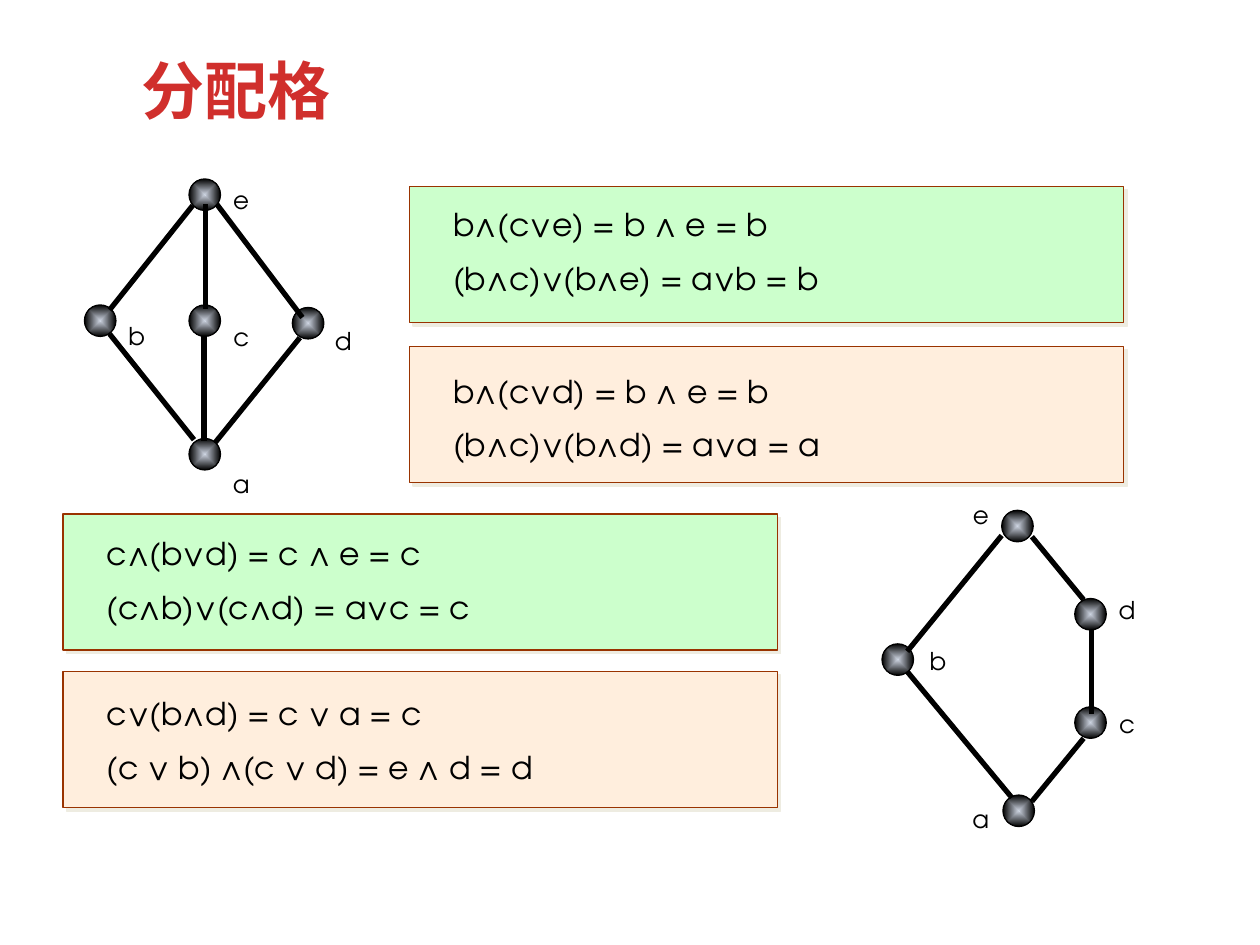
from lxml.etree import SubElement
from pptx import Presentation
from pptx.dml.color import RGBColor
from pptx.enum.shapes import MSO_CONNECTOR, MSO_SHAPE
from pptx.enum.text import MSO_ANCHOR, PP_ALIGN
from pptx.oxml import parse_xml
from pptx.oxml.ns import nsdecls, qn
from pptx.util import Inches, Pt

COLORS = {
    "title": "D02F2C",
    "text": "000000",
    "green": "CCFFCC",
    "peach": "FFEEDD",
    "border": "993300",
    "shadow": "EEECE1",
    "node_center": "CDD4E1",
    "node_edge": "000000",
}
NODE_SIZE = 0.25
LABEL_SIZE = 0.33


def write_text(box, text, size, font="TeX Gyre Adventor", color="text", bold=False,
               align=PP_ALIGN.LEFT, anchor=MSO_ANCHOR.TOP, gap=0):
    frame = box.text_frame
    frame.word_wrap = True
    frame.vertical_anchor = anchor
    for index, line in enumerate(text.split("\n")):
        para = frame.paragraphs[0] if index == 0 else frame.add_paragraph()
        para.alignment = align
        para.space_before = Pt(gap if index else 0)
        span = para.add_run()
        span.text = line
        span.font.size = Pt(size)
        span.font.bold = bold
        span.font.color.rgb = RGBColor.from_string(COLORS[color])
        span.font.name = font


def add_shadow(fill_element):
    fill_element.addnext(parse_xml(
        f'<a:effectLst {nsdecls("a")}><a:outerShdw dist="35560" dir="2700000" algn="ctr" '
        f'rotWithShape="0"><a:srgbClr val="{COLORS["shadow"]}"/></a:outerShdw></a:effectLst>'))


deck = Presentation()
deck.slide_width, deck.slide_height = Inches(10), Inches(7.5)
page = deck.slides.add_slide(deck.slide_layouts[5])

title = page.shapes.title
title.left, title.top, title.width, title.height = map(Inches, (0.16, 0.36, 3.42, 0.7))
write_text(title, "分配格", 36, font="Arial", color="title", bold=True,
           align=PP_ALIGN.CENTER)
title_format = title.text_frame.paragraphs[0].runs[0].font
add_shadow(title_format._element.find(qn("a:solidFill")))

panels = [
    (3.25, 1.48, 0.1, "green", "b∧(c∨e) = b ∧ e = b\n(b∧c)∨(b∧e) = a∨b = b"),
    (3.25, 2.75, 0.15, "peach", "b∧(c∨d) = b ∧ e = b\n(b∧c)∨(b∧d) = a∨a = a"),
    (0.5, 4.08, 0.11, "green", "c∧(b∨d) = c ∧ e = c\n(c∧b)∨(c∧d) = a∨c = c"),
    (0.5, 5.33, 0.13, "peach", "c∨(b∧d) = c ∨ a = c\n(c ∨ b) ∧(c ∨ d) = e ∧ d = d"),
]
for left, top, offset, color, formulas in panels:
    panel = page.shapes.add_shape(MSO_SHAPE.RECTANGLE, Inches(left), Inches(top),
                                  Inches(5.67), Inches(1.08))
    panel.fill.solid()
    panel.fill.fore_color.rgb = RGBColor.from_string(COLORS[color])
    panel.line.color.rgb = RGBColor.from_string(COLORS["border"])
    panel.line.width = Pt(0.75)
    add_shadow(panel.line._ln)
    box = page.shapes.add_textbox(Inches(left + 0.25), Inches(top + offset),
                                  Inches(5.17), Inches(0.85))
    write_text(box, formulas, 18, gap=9)

lattices = [
    {
        "nodes": [(1.5, 1.42), (0.67, 2.42), (1.5, 2.42), (2.32, 2.44), (1.5, 3.48)],
        "edges": [
            (1.53, 1.63, 0.87, 2.46), (1.54, 3.49, 0.87, 2.65), (1.63, 1.62, 1.63, 2.45),
            (1.62, 2.67, 1.62, 3.5), (1.72, 1.62, 2.4, 2.52), (2.38, 2.68, 1.71, 3.51),
        ],
        "labels": {"a": (1.75, 3.67), "b": (0.92, 2.5), "c": (1.75, 2.51),
                   "d": (2.56, 2.54), "e": (1.75, 1.42)},
    },
    {
        "nodes": [(7.95, 4.05), (7, 5.11), (8.53, 4.75), (8.53, 5.61), (7.96, 6.31)],
        "edges": [
            (7.95, 4.25, 7.2, 5.17), (8.03, 6.33, 7.2, 5.33), (8.6, 5.86, 8.19, 6.36),
            (8.66, 5, 8.66, 5.67), (8.19, 4.26, 8.6, 4.76),
        ],
        "labels": {"a": (7.62, 6.33), "b": (7.28, 5.08), "c": (8.78, 5.58),
                   "d": (8.78, 4.67), "e": (7.62, 3.92)},
    },
]
for lattice in lattices:
    group = page.shapes.add_group_shape()
    for left, top in lattice["nodes"]:
        node = group.shapes.add_shape(MSO_SHAPE.OVAL, Inches(left), Inches(top),
                                      Inches(NODE_SIZE), Inches(NODE_SIZE))
        node.shadow.inherit = False
        node.fill.gradient()
        for stop, color in zip(node.fill.gradient_stops, ("node_center", "node_edge")):
            stop.color.rgb = RGBColor.from_string(COLORS[color])
        gradient = node._element.spPr.find(qn("a:gradFill"))
        gradient.remove(gradient.find(qn("a:lin")))
        shading = SubElement(gradient, qn("a:path"))
        shading.set("path", "shape")
        center = SubElement(shading, qn("a:fillToRect"))
        for side in "ltrb":
            center.set(side, "50000")
        node.line.color.rgb = RGBColor.from_string(COLORS["node_edge"])
        node.line.width = Pt(0.75)
    for ends in lattice["edges"]:
        edge = group.shapes.add_connector(MSO_CONNECTOR.STRAIGHT, *map(Inches, ends))
        edge.line.color.rgb = RGBColor.from_string(COLORS["node_edge"])
        edge.line.width = Pt(3)
        SubElement(edge._element.spPr, qn("a:effectLst"))
    for letter, (left, top) in lattice["labels"].items():
        label = group.shapes.add_textbox(Inches(left), Inches(top),
                                         Inches(LABEL_SIZE), Inches(LABEL_SIZE))
        write_text(label, letter, 14, align=PP_ALIGN.CENTER)

deck.save("out.pptx")
